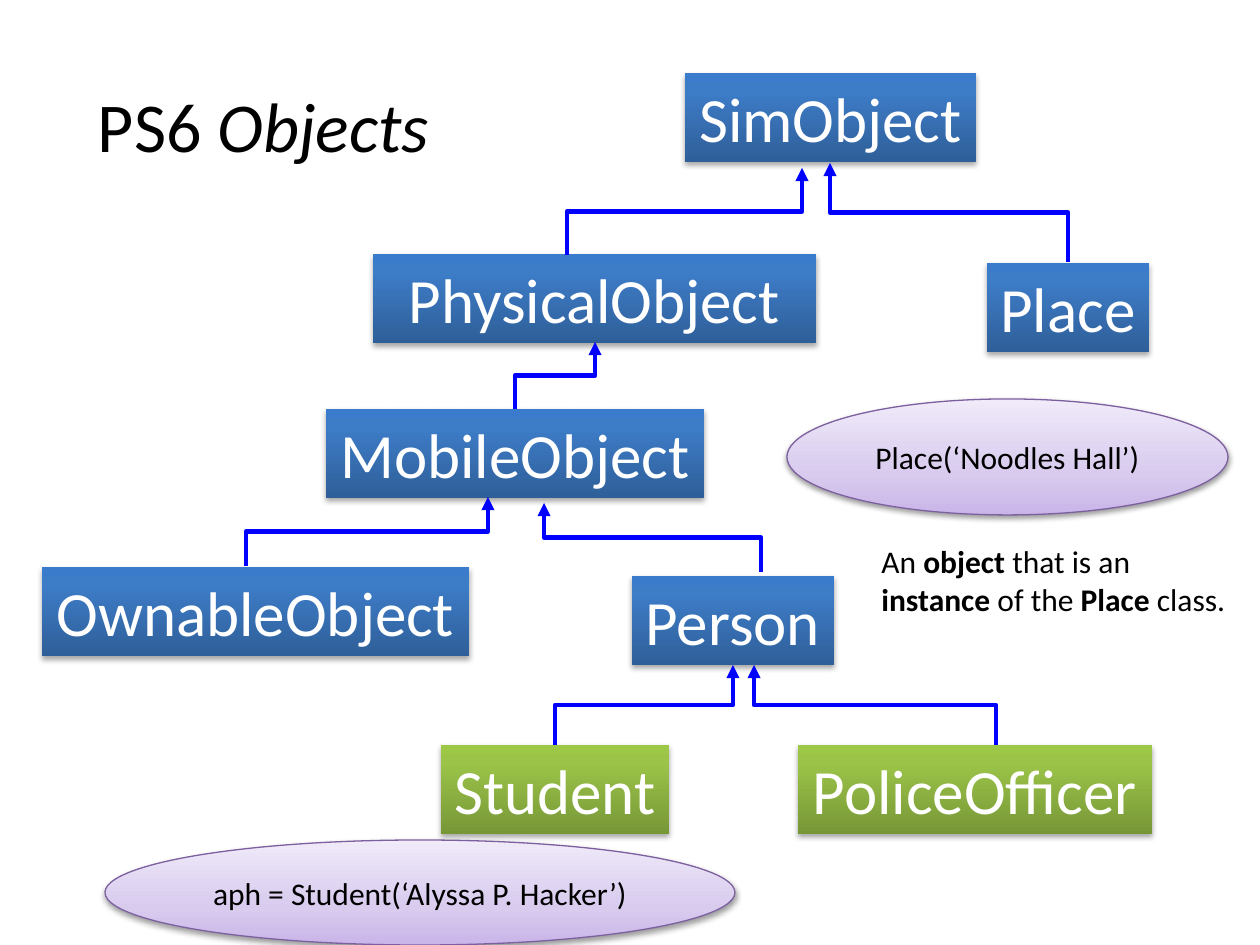
from lxml import etree
from pptx import Presentation
from pptx import util as u
from pptx.dml.color import RGBColor
from pptx.enum import shapes, text
from pptx.oxml.ns import qn

COLORS = {"black": "000000", "white": "FFFFFF", "arrow": "0000FF", "outline": "7D60A0"}
GRADIENTS = {
    "blue": [(0, "2F5F99"), (80, "3D7CC7"), (100, "3A7CCB")],
    "green": [(0, "779737"), (80, "9BC348"), (100, "9DC746")],
    "purple": [(0, "C9B5E8"), (35, "D8CBEE"), (100, "F0EAF9")],
}
CLASS_HEIGHT = 89
CLASSES = [
    ("SimObject", 685, 73, 291, "blue"),
    ("PhysicalObject", 373, 254, 443, "blue"),
    ("Place", 987, 263, 162, "blue"),
    ("MobileObject", 326, 409, 378, "blue"),
    ("OwnableObject", 42, 567, 427, "blue"),
    ("Person", 632, 576, 202, "blue"),
    ("Student", 441, 745, 228, "green"),
    ("PoliceOfficer", 798, 745, 354, "green"),
]
INHERITANCE = [
    (555, 745, 733, 665),
    (246, 566, 488, 497),
    (515, 409, 595, 342),
    (1068, 262, 830, 163),
    (761, 572, 544, 503),
    (567, 255, 802, 168),
    (996, 745, 754, 665),
]
INSTANCES = [
    ("Place(‘Noodles Hall’)", 787, 399, 441, 116),
    ("aph = Student(‘Alyssa P. Hacker’)", 105, 840, 630, 105),
]


def px(n):
    return u.Emu(round(n * 914400 / 126))


def rgb(name):
    return RGBColor.from_string(COLORS[name])


def add_run(p, words, size=18, color="black", bold=False, italic=False):
    r = p.add_run()
    r.text = words
    f = r.font
    f.name, f.size, f.bold, f.italic = "Calibri", u.Pt(size), bold, italic
    f.color.rgb = rgb(color)


def set_gradient(sp, stops):
    sp.fill.gradient()
    sp.fill.gradient_angle = 90
    gs_list = sp._element.spPr.find(".//" + qn("a:gsLst"))
    for gs in list(gs_list):
        gs_list.remove(gs)
    for pos, color in stops:
        gs = etree.SubElement(gs_list, qn("a:gs"), pos=str(pos * 1000))
        etree.SubElement(gs, qn("a:srgbClr"), val=color)


def set_shadow(sp, distance, opacity):
    sp.shadow.inherit = False
    effects = sp._element.spPr.find(qn("a:effectLst"))
    shadow = etree.SubElement(effects, qn("a:outerShdw"), blurRad="40000",
                              dist=str(distance), dir="5400000", rotWithShape="0")
    color = etree.SubElement(shadow, qn("a:srgbClr"), val=COLORS["black"])
    etree.SubElement(color, qn("a:alpha"), val=str(opacity * 1000))


def add_label(s, kind, label, box, gradient, size, color):
    sp = s.shapes.add_shape(kind, *map(px, box))
    set_gradient(sp, GRADIENTS[gradient])
    tf = sp.text_frame
    tf.vertical_anchor = text.MSO_ANCHOR.MIDDLE
    p = tf.paragraphs[0]
    p.alignment = text.PP_ALIGN.CENTER
    add_run(p, label, size=size, color=color)
    return sp


def add_class(s, name, x, y, w, gradient):
    sp = add_label(s, shapes.MSO_SHAPE.RECTANGLE, name, (x, y, w, CLASS_HEIGHT),
                   gradient, 36, "white")
    sp.line.fill.background()
    set_shadow(sp, 23000, 35)
    sp.text_frame.word_wrap = False
    sp.text_frame.auto_size = text.MSO_AUTO_SIZE.SHAPE_TO_FIT_TEXT


def add_instance(s, label, *box):
    sp = add_label(s, shapes.MSO_SHAPE.OVAL, label, box, "purple", 18, "black")
    sp.line.color.rgb = rgb("outline")
    sp.line.width = u.Pt(0.75)
    set_shadow(sp, 20000, 38)
    sp.text_frame.word_wrap = True


def add_arrow(s, x1, y1, x2, y2):
    cx, cy = (x1 + x2) / 2, (y1 + y2) / 2
    half_rise, half_run = (y1 - y2) / 2, (x2 - x1) / 2
    ends = (cx - half_rise, cy - half_run, cx + half_rise, cy + half_run)
    c = s.shapes.add_connector(shapes.MSO_CONNECTOR.ELBOW, *map(px, ends))
    c.line.color.rgb = rgb("arrow")
    c.line.width = u.Pt(2.5)
    spPr = c._element.spPr
    spPr.find(qn("a:xfrm")).set("rot", str(270 * 60000))
    etree.SubElement(spPr.find(qn("a:ln")), qn("a:tailEnd"), type="triangle")
    etree.SubElement(spPr, qn("a:effectLst"))


def add_text(s, box, runs, size, align=text.PP_ALIGN.LEFT, anchor=text.MSO_ANCHOR.TOP):
    tf = s.shapes.add_textbox(*map(px, box)).text_frame
    tf.word_wrap = True
    tf.vertical_anchor = anchor
    p = tf.paragraphs[0]
    p.alignment = align
    for words, style in runs:
        add_run(p, words, size=size, **style)


def main():
    prs = Presentation()
    prs.slide_width, prs.slide_height = px(1260), px(945)
    s = prs.slides.add_slide(prs.slide_layouts[6])
    for item in CLASSES:
        add_class(s, *item)
    for ends in INHERITANCE:
        add_arrow(s, *ends)
    add_text(s, (42, 48, 443, 154), [("PS6 ", {}), ("Objects", {"italic": True})], 40,
             align=text.PP_ALIGN.CENTER, anchor=text.MSO_ANCHOR.MIDDLE)
    for item in INSTANCES:
        add_instance(s, *item)
    bold = {"bold": True}
    add_text(s, (869, 536, 369, 89),
             [("An ", {}), ("object", bold), (" that is an ", {}), ("instance ", bold),
              ("of the ", {}), ("Place ", bold), ("class.", {})], 18)
    prs.save("out.pptx")


if __name__ == "__main__":
    main()
